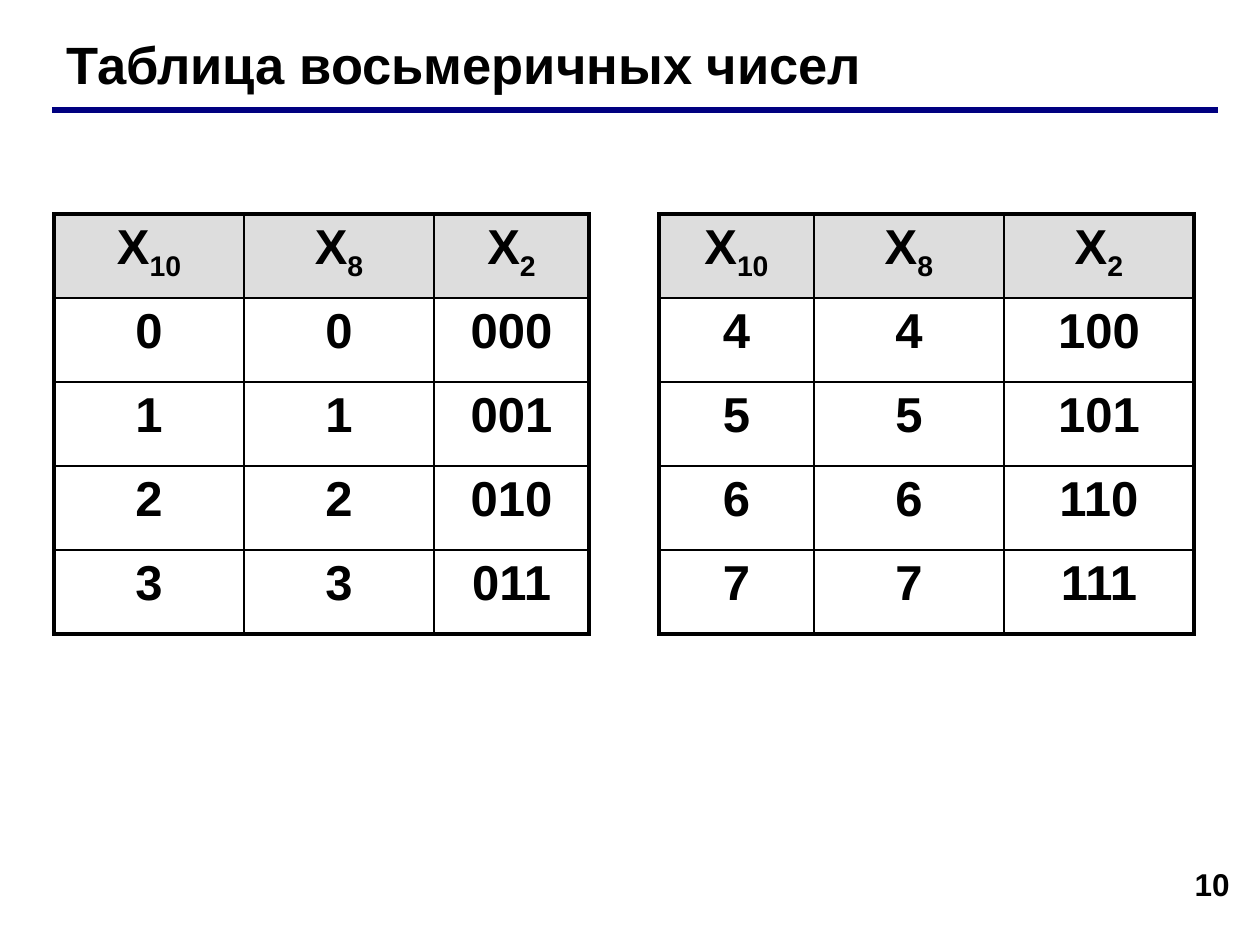
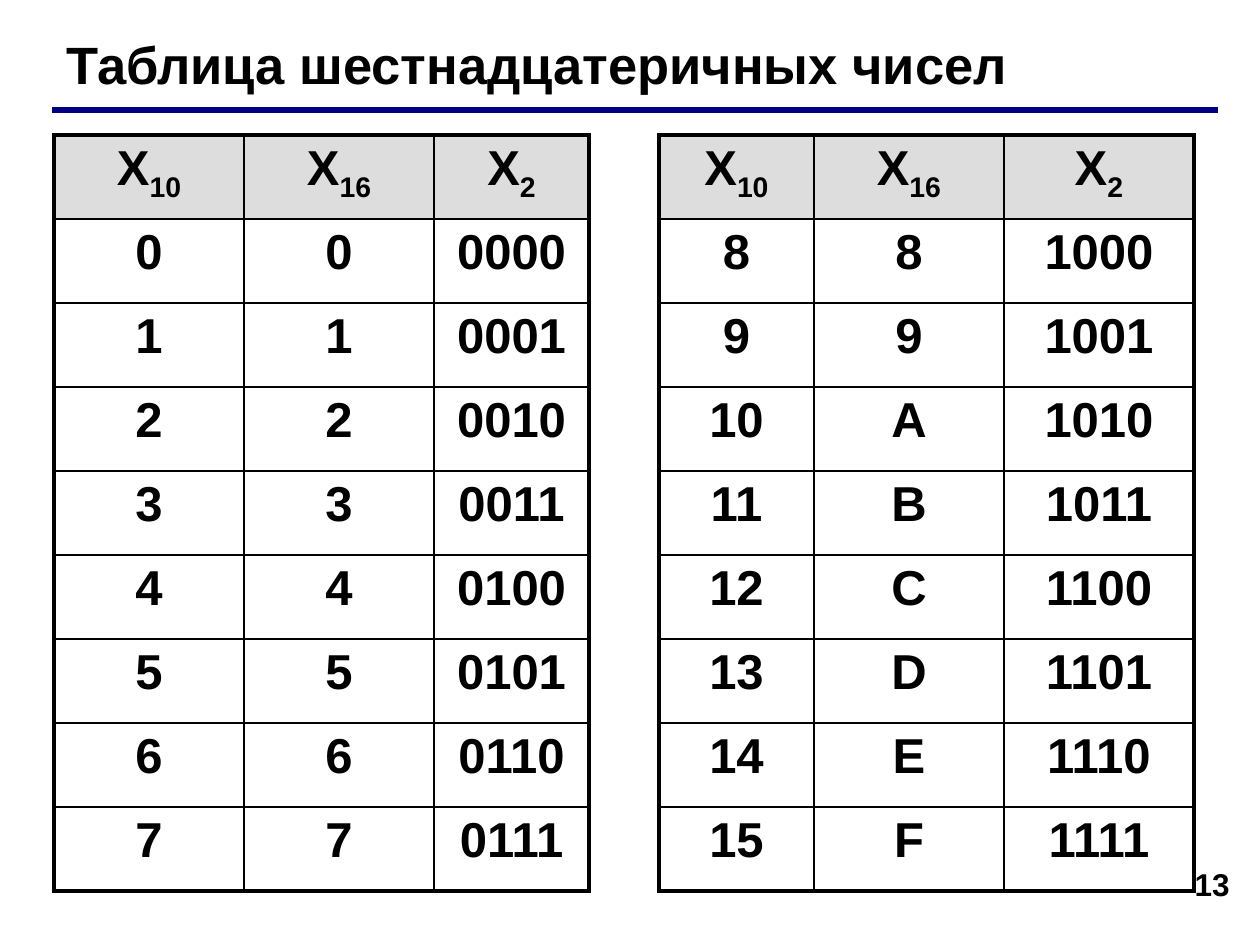
from lxml import etree
from pptx import Presentation
from pptx.dml.color import RGBColor
from pptx.enum.shapes import MSO_CONNECTOR
from pptx.enum.text import MSO_ANCHOR, PP_ALIGN
from pptx.oxml.ns import qn
from pptx.util import Emu, Pt

STRAIGHT = MSO_CONNECTOR.STRAIGHT
TOP = MSO_ANCHOR.TOP
LEFT, CENTER, RIGHT = PP_ALIGN.LEFT, PP_ALIGN.CENTER, PP_ALIGN.RIGHT

FONT = "Arial"
BLACK, NAVY, GREY = "000000", "000080", "DDDDDD"
THIN, THICK = 1, 2.25
TABLE_LEFT, ROW_HEIGHT = 54, 84
COLUMN_WIDTHS = [190, 190, 155, 70, 155, 190, 190]
GAP_COLUMN = 3
LEFT_EDGES, RIGHT_EDGES = (0, GAP_COLUMN + 1), (GAP_COLUMN - 1, 6)


def px(length):
    return Emu(round(length * 914400 / 126))


def color(value):
    return RGBColor.from_string(value)


def format_span(span, size):
    span.font.name = FONT
    span.font.size = Pt(size)
    span.font.bold = True
    span.font.color.rgb = color(BLACK)


def add_text(page, text, left, top, width, height, size, align, before=0):
    box = page.shapes.add_textbox(px(left), px(top), px(width), px(height))
    frame = box.text_frame
    frame.word_wrap = True
    frame.vertical_anchor = TOP
    frame.text = text
    para = frame.paragraphs[0]
    para.alignment = align
    para.space_before = Pt(before)
    format_span(para.runs[0], size)


def add_rule(page):
    rule = page.shapes.add_connector(STRAIGHT, px(52), px(110), px(1218), px(110))
    rule.line.color.rgb = color(NAVY)
    rule.line.width = Pt(3)
    etree.SubElement(rule._element.spPr, qn("a:effectLst"))


def add_page(deck, title, number):
    page = deck.slides.add_slide(deck.slide_layouts[6])
    add_text(page, number, 948, 859, 294, 66, 18, RIGHT)
    add_rule(page)
    add_text(page, title, 54, 26, 1121, 76, 30, LEFT, before=3)
    return page


def set_border(cell, side, width):
    properties = cell._tc.get_or_add_tcPr()
    line = etree.SubElement(properties, qn(f"a:ln{side}"), w=str(Pt(width)))
    if width:
        fill = etree.SubElement(line, qn("a:solidFill"))
        etree.SubElement(fill, qn("a:srgbClr"), val=BLACK)
    else:
        etree.SubElement(line, qn("a:noFill"))


def set_borders(cell, row, column, last_row):
    if column == GAP_COLUMN:
        widths = {"L": THICK, "R": THICK, "T": 0, "B": 0}
    else:
        widths = {
            "L": THICK if column in LEFT_EDGES else THIN,
            "R": THICK if column in RIGHT_EDGES else THIN,
            "T": THICK if row == 0 else THIN,
            "B": THICK if row == last_row else THIN,
        }
    for side, width in widths.items():
        set_border(cell, side, width)


def fill_cell(cell, text, base=""):
    para = cell.text_frame.paragraphs[0]
    para.alignment = CENTER
    para.space_before = Pt(1)
    span = para.add_run()
    span.text = text
    format_span(span, 28)
    if base:
        subscript = para.add_run()
        subscript.text = base
        format_span(subscript, 28)
        subscript.font._element.set("baseline", "-25000")


def number_cells(value, base_format, digits):
    return [str(value), format(value, base_format), format(value, f"0{digits}b")]


def add_number_table(page, top, base, base_format, digits):
    half = 2 ** (digits - 1)
    table = page.shapes.add_table(
        half + 1, len(COLUMN_WIDTHS), px(TABLE_LEFT), px(top),
        px(sum(COLUMN_WIDTHS)), px(ROW_HEIGHT * (half + 1))).table
    table.first_row = False
    table.horz_banding = False
    for column, width in zip(table.columns, COLUMN_WIDTHS):
        column.width = px(width)
    for row in table.rows:
        row.height = px(ROW_HEIGHT)

    bases = ["10", base, "2"]
    for row in range(half + 1):
        if row:
            texts = (number_cells(row - 1, base_format, digits) + [""]
                     + number_cells(row - 1 + half, base_format, digits))
        else:
            texts = bases + [""] + bases
        for column, text in enumerate(texts):
            cell = table.cell(row, column)
            set_borders(cell, row, column, half)
            cell.fill.background()
            if column == GAP_COLUMN:
                continue
            if row:
                fill_cell(cell, text)
            else:
                cell.fill.solid()
                cell.fill.fore_color.rgb = color(GREY)
                fill_cell(cell, "X", text)


def main():
    deck = Presentation()
    deck.slide_width, deck.slide_height = px(1260), px(945)
    octal = add_page(deck, "Таблица восьмеричных чисел", "10")
    add_number_table(octal, 214, "8", "o", 3)
    hexadecimal = add_page(deck, "Таблица шестнадцатеричных чисел", "13")
    add_number_table(hexadecimal, 135, "16", "X", 4)
    deck.save("out.pptx")


if __name__ == "__main__":
    main()
